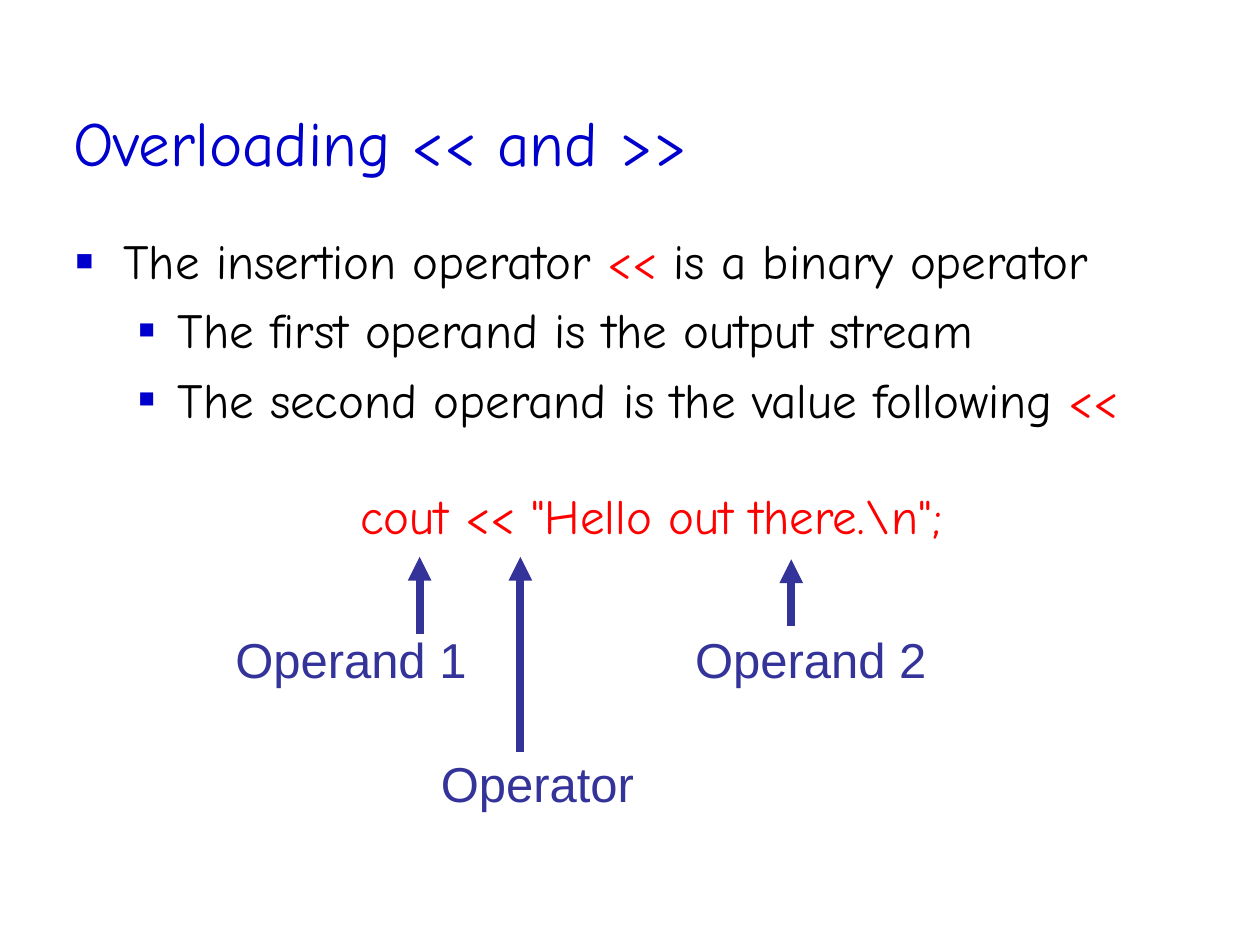
from typing import NamedTuple

from lxml import etree
from pptx import Presentation
from pptx import util as u
from pptx.dml.color import RGBColor
from pptx.enum import shapes, text
from pptx.oxml import ns

BLUE, NAVY, RED, BLACK = "0000CC", "333399", "FF0000", "000000"
HAND, SANS = "Comic Neue", "Arial"


class Run(NamedTuple):
    text: str
    color: str = BLACK


class Line(NamedTuple):
    runs: list[Run]
    left: float
    hang: float = 0
    level: int = 0
    size: int = 0  # bullet size in percent, 0 for no bullet
    gap: int = 6


class Label(NamedTuple):
    text: str
    left: float
    top: float
    width: float
    x: float  # arrow position
    tail: float
    tip: float


LINES = [
    Line([Run("The insertion operator "), Run("<<", RED),
          Run(" is a binary operator")], 0.38, 0.38, size=60),
    Line([Run("The first operand is the output stream")],
         0.81, 0.31, 1, 55),
    Line([Run("The second operand is the value following "),
          Run("<<", RED)], 0.81, 0.31, 1, 55),
    Line([Run('cout << "Hello out there.\\n";', RED)], 2.26, gap=33),
]
LABELS = [
    Label("Operand 1", 1.81, 4.95, 1.95, 3.33, 5.03, 4.42),
    Label("Operator", 3.44, 5.93, 1.65, 4.13, 5.97, 4.42),
    Label("Operand 2", 5.46, 4.95, 1.95, 6.28, 4.97, 4.44),
]


def rgb(color: str) -> RGBColor:
    return RGBColor.from_string(color)


def add_tag(parent, tag: str, **attrs: str):
    return etree.SubElement(parent, ns.qn(tag), attrs)


def set_frame(frame, inset: float, wrap: bool) -> None:
    frame.word_wrap = wrap
    frame.margin_left = frame.margin_right = u.Inches(inset)
    frame.margin_top = frame.margin_bottom = u.Inches(inset)


def add_run(para, run: Run, font: str, size: int) -> None:
    part = para.add_run()
    part.text = run.text
    part.font.name = font
    part.font.size = u.Pt(size)
    part.font.color.rgb = rgb(run.color)


def add_line(para, line: Line) -> None:
    para.level = line.level
    para.space_before = u.Pt(line.gap)
    props = para._p.get_or_add_pPr()
    props.set("marL", str(u.Inches(line.left)))
    props.set("indent", str(-u.Inches(line.hang)))
    if line.size:
        add_tag(add_tag(props, "a:buClr"), "a:srgbClr", val=BLUE)
        add_tag(props, "a:buSzPct", val=str(line.size * 1000))
        add_tag(props, "a:buFont", typeface=SANS)
        add_tag(props, "a:buChar", char="■")
    for run in line.runs:
        add_run(para, run, HAND, 28)


def add_arrow(group, x: float, tail: float, tip: float) -> None:
    arrow = group.shapes.add_connector(
        shapes.MSO_CONNECTOR.STRAIGHT,
        u.Inches(x), u.Inches(tail), u.Inches(x), u.Inches(tip))
    arrow.line.color.rgb = rgb(NAVY)
    arrow.line.width = u.Pt(4.5)
    add_tag(arrow.line._get_or_add_ln(), "a:tailEnd", type="triangle")
    add_tag(arrow._element.spPr, "a:effectLst")


def add_label(group, label: Label) -> None:
    box = group.shapes.add_textbox(
        u.Inches(label.left), u.Inches(label.top),
        u.Inches(label.width), u.Inches(0.53))
    set_frame(box.text_frame, 0.05, False)
    para = box.text_frame.paragraphs[0]
    para.alignment = text.PP_ALIGN.CENTER
    para.space_before = u.Pt(6)
    add_run(para, Run(label.text, NAVY), SANS, 28)
    add_arrow(group, label.x, label.tail, label.tip)


def main() -> None:
    deck = Presentation()
    deck.slide_width, deck.slide_height = u.Inches(10), u.Inches(7.5)
    slide = deck.slides.add_slide(deck.slide_layouts[5])

    # Title
    title = slide.shapes.title
    title.left, title.top = u.Inches(0.58), u.Inches(0.33)
    title.width, title.height = u.Inches(9.08), u.Inches(1.09)
    frame = title.text_frame
    set_frame(frame, 0, True)
    frame.auto_size = text.MSO_AUTO_SIZE.NONE
    frame.vertical_anchor = text.MSO_ANCHOR.BOTTOM
    head = frame.paragraphs[0]
    head.alignment = text.PP_ALIGN.LEFT
    add_run(head, Run("Overloading << and >>", BLUE), HAND, 36)

    # Bullets and the code line
    body = slide.shapes.add_textbox(
        u.Inches(0.6), u.Inches(1.83), u.Inches(9.07), u.Inches(5))
    frame = body.text_frame
    set_frame(frame, 0, True)
    for i, line in enumerate(LINES):
        add_line(frame.add_paragraph() if i else frame.paragraphs[0], line)

    # Labels with arrows up to the code
    group = slide.shapes.add_group_shape()
    for label in LABELS:
        add_label(group, label)

    deck.save("out.pptx")


if __name__ == "__main__":
    main()
